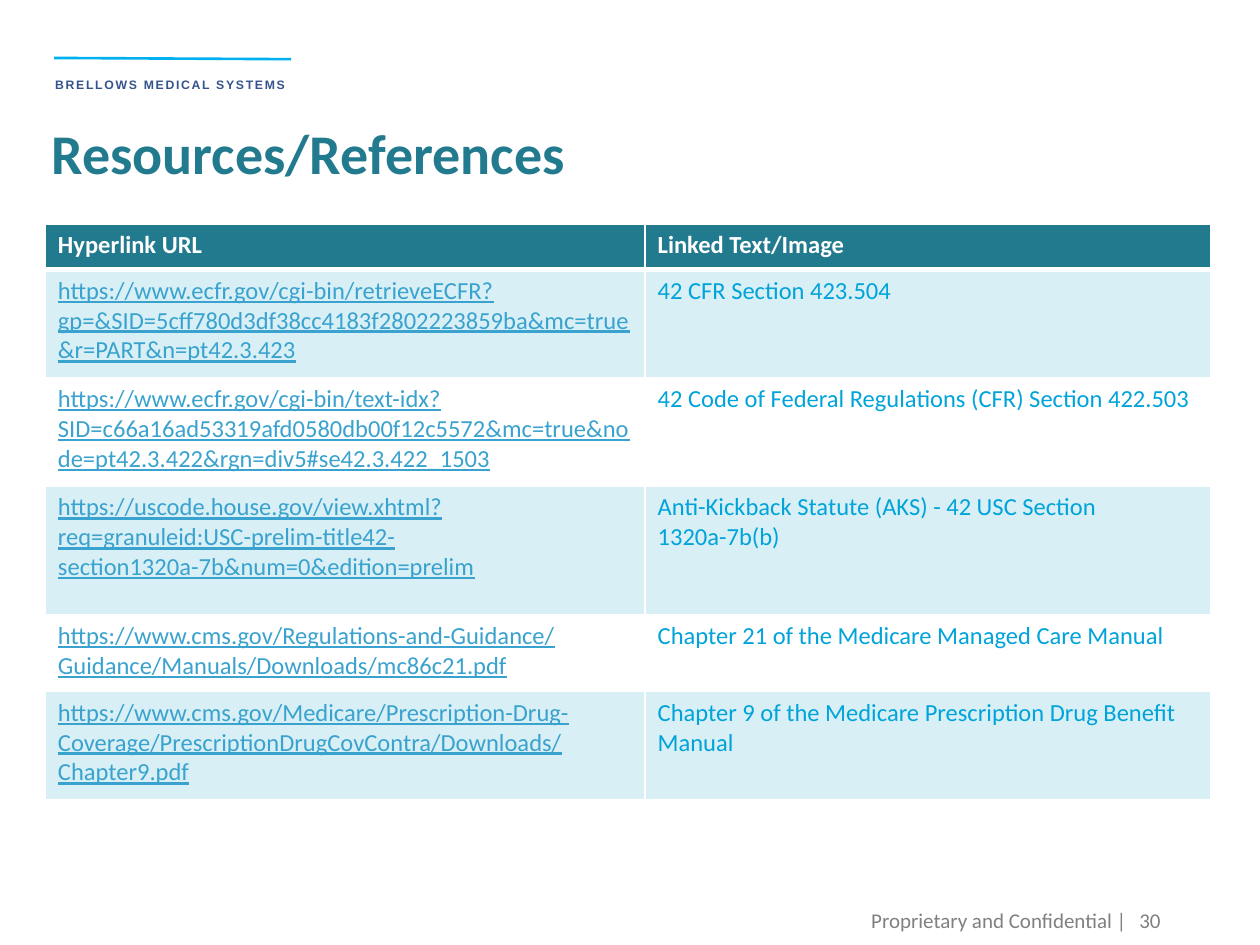
from lxml import etree
from pptx import Presentation
from pptx.dml.color import RGBColor
from pptx.enum.shapes import MSO_CONNECTOR
from pptx.enum.text import MSO_ANCHOR, PP_ALIGN
from pptx.oxml.ns import qn
from pptx.util import Inches, Pt

STRAIGHT = MSO_CONNECTOR.STRAIGHT
TOP, MIDDLE = MSO_ANCHOR.TOP, MSO_ANCHOR.MIDDLE
LEFT, RIGHT = PP_ALIGN.LEFT, PP_ALIGN.RIGHT

TEAL, PALE, WHITE = "227A8F", "D7EFF5", "FFFFFF"
URL_BLUE, TEXT_BLUE, GRAY = "39A2CE", "00A3DA", "808080"
NAVY, SKY = "35538D", "00B0F0"

COLUMN_WIDTHS = [4.76, 4.49]
ROW_HEIGHTS = [0.36, 0.86, 0.86, 1.02, 0.61, 0.86]
HEADINGS = ("Hyperlink URL", "Linked Text/Image")
REFERENCES = [
    ("https://www.ecfr.gov/cgi-bin/retrieveECFR?gp=&SID=5cff780d3df38cc4183f2802223859ba&mc=true&r=PART&n=pt42.3.423",
     "42 CFR Section 423.504"),
    ("https://www.ecfr.gov/cgi-bin/text-idx?SID=c66a16ad53319afd0580db00f12c5572&mc=true&node=pt42.3.422&rgn=div5#se42.3.422_1503",
     "42 Code of Federal Regulations (CFR) Section 422.503"),
    ("https://uscode.house.gov/view.xhtml?req=granuleid:USC-prelim-title42-section1320a-7b&num=0&edition=prelim",
     "Anti-Kickback Statute (AKS) - 42 USC Section 1320a-7b(b)"),
    ("https://www.cms.gov/Regulations-and-Guidance/Guidance/Manuals/Downloads/mc86c21.pdf",
     "Chapter 21 of the Medicare Managed Care Manual"),
    ("https://www.cms.gov/Medicare/Prescription-Drug-Coverage/PrescriptionDrugCovContra/Downloads/Chapter9.pdf",
     "Chapter 9 of the Medicare Prescription Drug Benefit Manual"),
]


def color(value):
    return RGBColor.from_string(value)


def add_span(para, text, size, shade, bold=False, underline=False, name="Calibri"):
    span = para.add_run()
    span.text = text
    font = span.font
    font.name, font.size = name, Pt(size)
    font.bold, font.underline = bold, underline
    font.color.rgb = color(shade)
    return span


def add_text(page, place, text, size, shade, align=LEFT, anchor=TOP, wrap=True, **style):
    box = page.shapes.add_textbox(*map(Inches, place))
    frame = box.text_frame
    frame.word_wrap = wrap
    frame.vertical_anchor = anchor
    para = frame.paragraphs[0]
    para.alignment = align
    return para, add_span(para, text, size, shade, **style)


def add_brand(page):
    para, span = add_text(page, (0.34, 0.46, 2.04, 0.29), "BRELLOWS MEDICAL SYSTEMS",
                          7, NAVY, wrap=False, bold=True, name="Arial")
    para.line_spacing = Pt(16)
    span.font._element.set("spc", "100")


def add_rule(page):
    rule = page.shapes.add_connector(
        STRAIGHT, Inches(0.43), Inches(0.46), Inches(2.31), Inches(0.47))
    rule.line.color.rgb = color(SKY)
    rule.line.width = Pt(1.5)
    etree.SubElement(rule._element.spPr, qn("a:effectLst"))


def add_borders(cell, **widths):
    properties = cell._tc.get_or_add_tcPr()
    for side in "LRTB":
        line = etree.SubElement(properties, qn("a:ln" + side), w=str(Pt(widths.get(side, 1))))
        fill = etree.SubElement(line, qn("a:solidFill"))
        etree.SubElement(fill, qn("a:srgbClr"), val=WHITE)


def fill_cell(cell, text, shade, background, borders, **style):
    add_borders(cell, **borders)
    if background:
        cell.fill.solid()
        cell.fill.fore_color.rgb = color(background)
    else:
        cell.fill.background()
    add_span(cell.text_frame.paragraphs[0], text, 14, shade, **style)


def add_references(page):
    table = page.shapes.add_table(
        len(ROW_HEIGHTS), len(COLUMN_WIDTHS), Inches(0.36), Inches(1.78),
        Inches(sum(COLUMN_WIDTHS)), Inches(sum(ROW_HEIGHTS))).table
    for column, width in zip(table.columns, COLUMN_WIDTHS):
        column.width = Inches(width)
    for row, height in zip(table.rows, ROW_HEIGHTS):
        row.height = Inches(height)
    for index, heading in enumerate(HEADINGS):
        fill_cell(table.cell(0, index), heading, WHITE, TEAL, {"B": 3}, bold=True)
    for index, (address, label) in enumerate(REFERENCES, 1):
        background = PALE if index % 2 else None
        borders = {"T": 3} if index == 1 else {}
        fill_cell(table.cell(index, 0), address, URL_BLUE, background, borders, underline=True)
        fill_cell(table.cell(index, 1), label, TEXT_BLUE, background, borders)


def main():
    deck = Presentation()
    deck.slide_width, deck.slide_height = Inches(10), Inches(7.5)
    page = deck.slides.add_slide(deck.slide_layouts[6])
    add_brand(page)
    add_rule(page)
    for left, width, text in [(5.66, 3.38, "Proprietary and Confidential |"), (8.85, 0.46, "30")]:
        add_text(page, (left, 7.1, width, 0.4), text, 12, GRAY, align=RIGHT, anchor=MIDDLE)
    add_references(page)
    add_text(page, (0.31, 0.89, 5.17, 0.64), "Resources/References", 32, TEAL, bold=True)
    deck.save("out.pptx")


if __name__ == "__main__":
    main()
